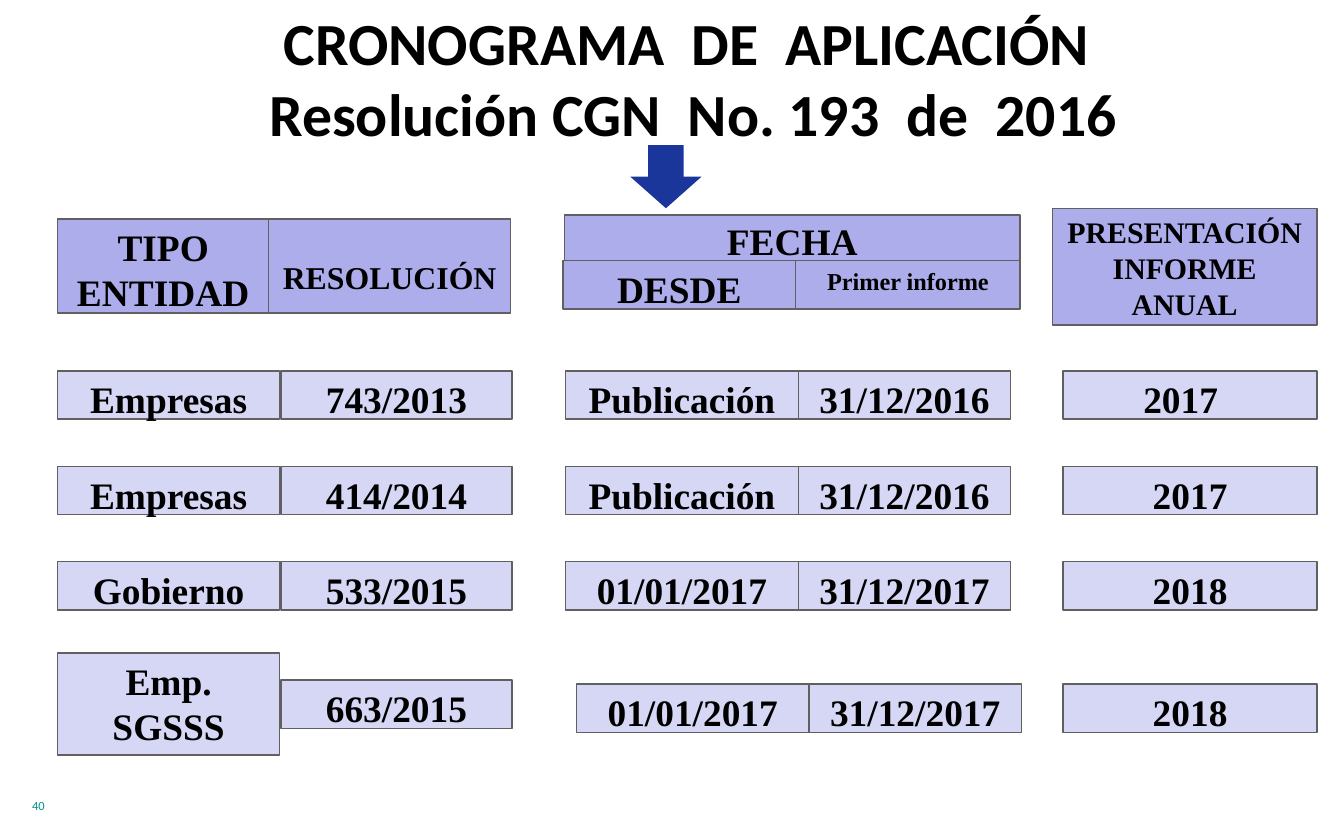
from pptx import Presentation
from pptx.dml.color import RGBColor
from pptx.enum.shapes import MSO_SHAPE as SHAPE
from pptx.enum.text import MSO_ANCHOR as ANCHOR, PP_ALIGN as ALIGN
from pptx.util import Inches, Pt


def rgb(value):
    return RGBColor.from_string(value)


def add_cell(x, y, w, h, text, fill, size=20, top=0.04, right=0.08):
    """Draw one bordered box; top and right are its text insets."""
    sp = s.shapes.add_shape(SHAPE.RECTANGLE, Inches(x), Inches(y), Inches(w), Inches(h))
    sp.shadow.inherit = False
    sp.fill.solid()
    sp.fill.fore_color.rgb = rgb(fill)
    sp.line.color.rgb = rgb("606060")
    sp.line.width = Pt(0.75)
    tf = sp.text_frame
    tf.word_wrap = True
    tf.vertical_anchor = ANCHOR.TOP
    tf.margin_left, tf.margin_right = Inches(0.08), Inches(right)
    tf.margin_top, tf.margin_bottom = Inches(top), Inches(0.04)
    p = tf.paragraphs[0]
    p.alignment = ALIGN.CENTER
    r = p.add_run()
    r.text = text
    r.font.name, r.font.size, r.font.bold = "Times New Roman", Pt(size), True
    r.font.color.rgb = rgb("000000")


prs = Presentation()
prs.slide_width, prs.slide_height = Inches(10), Inches(6.25)
s = prs.slides.add_slide(prs.slide_layouts[5])

# Title
title = s.shapes.title
title.left, title.top, title.width, title.height = Inches(0.99), 0, Inches(8.34), Inches(0.95)
tf = title.text_frame
tf.word_wrap = True
tf.vertical_anchor = ANCHOR.TOP
tf.margin_left = tf.margin_right = Inches(0.08)
tf.margin_top = tf.margin_bottom = Inches(0.04)
p = tf.paragraphs[0]
p.alignment = ALIGN.CENTER
for i, line in enumerate(["CRONOGRAMA  DE  APLICACIÓN ", "Resolución CGN  No. 193  de  2016"]):
    if i:
        p.add_line_break()
    r = p.add_run()
    r.text = line
    r.font.name, r.font.size, r.font.bold = "Calibri", Pt(32), True
    r.font.color.rgb = rgb("000000")

# Slide number
tf = s.shapes.add_textbox(Inches(0.14), Inches(5.89), Inches(2.08), Inches(0.3)).text_frame
tf.word_wrap = True
r = tf.paragraphs[0].add_run()
r.text = "40"
r.font.name, r.font.size = "Calibri", Pt(6.7)
r.font.color.rgb = rgb("00918E")

# Column headings
HEAD, BODY = "ADADEB", "D6D6F5"
ROW_H = 0.36
add_cell(0.43, 1.63, 1.57, 0.7, "TIPO ENTIDAD", HEAD)
add_cell(2.0, 1.63, 1.8, 0.7, "RESOLUCIÓN", HEAD, size=17, top=0.29)
add_cell(4.2, 1.6, 3.39, 0.34, "FECHA", HEAD, top=0.02)
add_cell(4.19, 1.94, 1.73, ROW_H, "DESDE", HEAD)
add_cell(5.92, 1.94, 1.67, ROW_H, "Primer informe", HEAD, size=13)
add_cell(7.83, 1.55, 1.97, 0.87, "PRESENTACIÓN INFORME ANUAL", HEAD, size=16)

# Evenly spaced rows of the schedule
columns = [(0.43, 1.65), (2.09, 1.72), (4.21, 1.73), (5.94, 1.58), (7.91, 1.89)]
rows = [
    ("Empresas", "743/2013", "Publicación", "31/12/2016", "2017"),
    ("Empresas", "414/2014", "Publicación", "31/12/2016", "2017"),
    ("Gobierno", "533/2015", "01/01/2017", "31/12/2017", "2018"),
]
for i, row in enumerate(rows):
    for j, ((x, w), text) in enumerate(zip(columns, row)):
        right = 0.22 if (i, j) == (0, 4) else 0.08
        add_cell(x, 2.76 + 0.71 * i, w, ROW_H, text, BODY, right=right)

# Last row: a taller first box, and dates set slightly to the right
last_row = [
    ("Emp. SGSSS", 0, 4.86, 0.76),
    ("663/2015", 0, 5.06, ROW_H),
    ("01/01/2017", 0.08, 5.09, ROW_H),
    ("31/12/2017", 0.08, 5.09, ROW_H),
    ("2018", 0, 5.09, ROW_H),
]
for (x, w), (text, shift, y, h) in zip(columns, last_row):
    add_cell(x + shift, y, w, h, text, BODY)

# Arrow from the title to the schedule
arrow = s.shapes.add_shape(SHAPE.DOWN_ARROW, Inches(4.69), Inches(1.08), Inches(0.53), Inches(0.47))
arrow.shadow.inherit = False
arrow.fill.solid()
arrow.fill.fore_color.rgb = rgb("1B369A")
arrow.line.fill.background()

prs.save("out.pptx")
